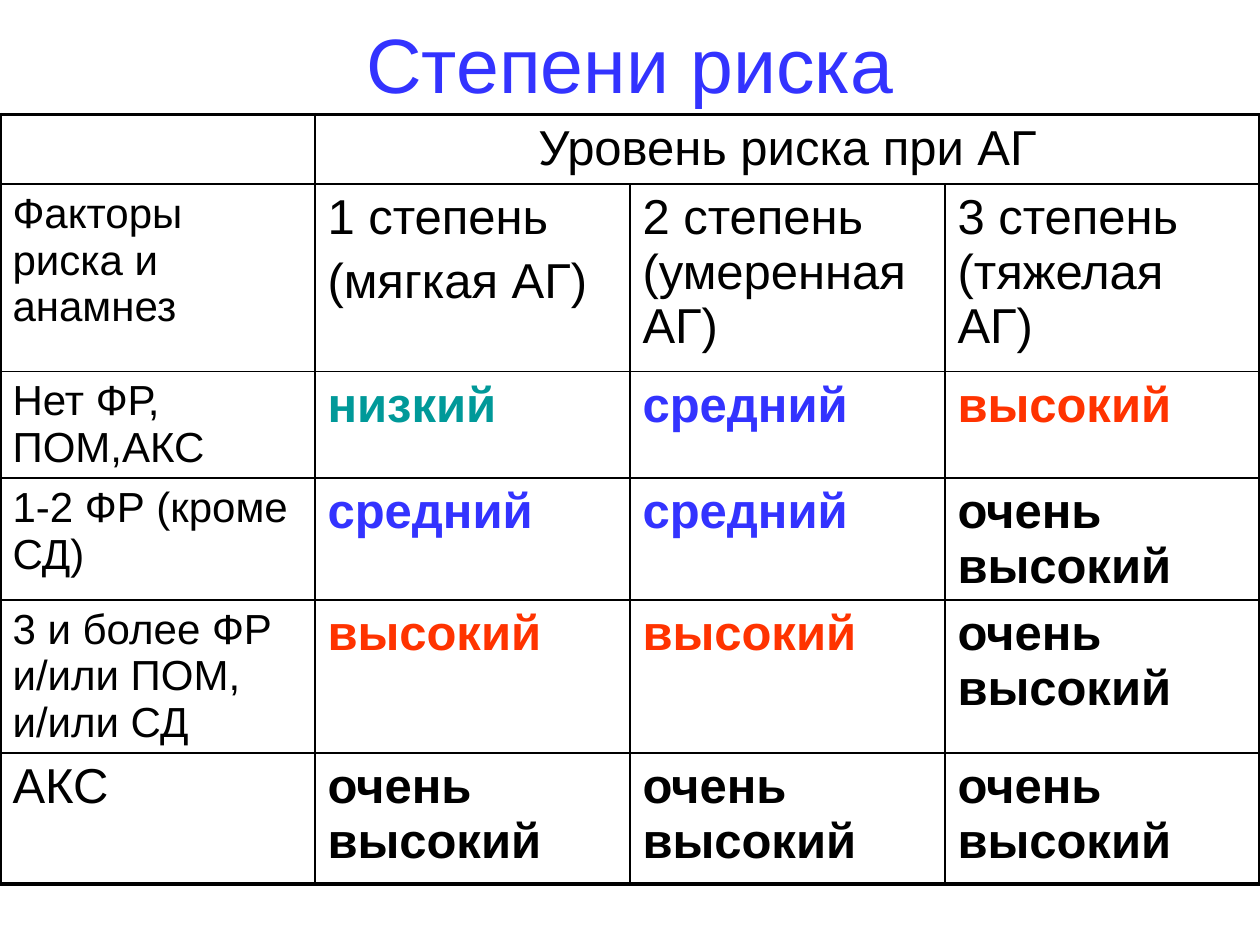
from lxml.etree import SubElement
from pptx import Presentation
from pptx.dml.color import RGBColor
from pptx.enum.text import MSO_ANCHOR as Anchor, MSO_AUTO_SIZE as AutoSize, PP_ALIGN as Align
from pptx.oxml.ns import qn
from pptx.util import Inches, Pt

BLACK, BLUE, TEAL, RED = "000000", "3333FF", "009999", "FF3300"
RISK_COLORS = {"низкий": TEAL, "средний": BLUE, "высокий": RED, "очень высокий": BLACK}
ROW_HEIGHTS = [0.55, 1.49, 0.83, 0.96, 1.03, 1.04]
RISK_LEVELS = [
    ["", "Уровень риска при АГ", "", ""],
    ["Факторы риска и анамнез", "1 степень\n(мягкая АГ)",
     "2 степень (умеренная АГ)", "3 степень (тяжелая АГ)"],
    ["Нет ФР, ПОМ,АКС", "низкий", "средний", "высокий"],
    ["1-2 ФР (кроме СД)", "средний", "средний", "очень высокий"],
    ["3 и более ФР и/или ПОМ, и/или СД", "высокий", "высокий", "очень высокий"],
    ["АКС", "очень высокий", "очень высокий", "очень высокий"],
]


def color(value):
    return RGBColor.from_string(value)


def write(frame, text, font="Arial", size=28, fill=BLACK, bold=False, align=Align.LEFT):
    for index, line in enumerate(text.split("\n")):
        paragraph = frame.add_paragraph() if index else frame.paragraphs[0]
        paragraph.alignment = align
        if index:
            paragraph.space_before = Pt(size * 0.2)
        run = paragraph.add_run()
        run.text = line
        run.font.name = font
        run.font.size = Pt(size)
        run.font.bold = bold
        run.font.color.rgb = color(fill)


class SlideBuilder:
    inner_line = 1
    outer_line = 2.25

    def __init__(self, slide):
        self.slide = slide

    def title(self, text, left, top, width, height):
        heading = self.slide.shapes.title
        heading.left, heading.top = Inches(left), Inches(top)
        heading.width, heading.height = Inches(width), Inches(height)
        frame = heading.text_frame
        frame.auto_size = AutoSize.NONE
        frame.vertical_anchor = Anchor.MIDDLE
        write(frame, text, size=44, fill=BLUE, align=Align.CENTER)

    def borders(self, cell, outer_sides):
        properties = cell._tc.get_or_add_tcPr()
        for side, is_outer in outer_sides.items():
            width = Pt(self.outer_line if is_outer else self.inner_line)
            line = SubElement(properties, qn(f"a:ln{side}"), w=str(width))
            solid = SubElement(line, qn("a:solidFill"))
            SubElement(solid, qn("a:srgbClr"), val=BLACK)

    def risk_table(self, rows, heights, left, top, width):
        last_row, last_column = len(rows) - 1, len(rows[0]) - 1
        table = self.slide.shapes.add_table(
            len(rows), len(rows[0]), Inches(left), Inches(top),
            Inches(width), Inches(sum(heights))).table
        table.first_row = table.horz_banding = False
        for row, height in zip(table.rows, heights):
            row.height = Inches(height)
        table.cell(0, 1).merge(table.cell(0, last_column))

        for r, texts in enumerate(rows):
            for c, text in enumerate(texts):
                cell = table.cell(r, c)
                if cell.is_spanned:
                    continue
                right = c + (cell.span_width if cell.is_merge_origin else 1) - 1
                self.borders(cell, {"L": c == 0, "R": right == last_column,
                                    "T": r == 0, "B": r == last_row})
                cell.fill.background()
                if text:
                    is_factor = c == 0 and r < last_row
                    write(cell.text_frame, text,
                          size=24 if is_factor else 28,
                          fill=RISK_COLORS.get(text, BLACK),
                          bold=text in RISK_COLORS,
                          align=Align.CENTER if r == 0 else Align.LEFT)


def main():
    deck = Presentation()
    deck.slide_width, deck.slide_height = Inches(10), Inches(7.5)
    builder = SlideBuilder(deck.slides.add_slide(deck.slide_layouts[5]))
    builder.title("Степени риска", 0.5, 0, 9, 0.99)
    builder.risk_table(RISK_LEVELS, ROW_HEIGHTS, 0, 0.91, 10)
    deck.save("out.pptx")


if __name__ == "__main__":
    main()
